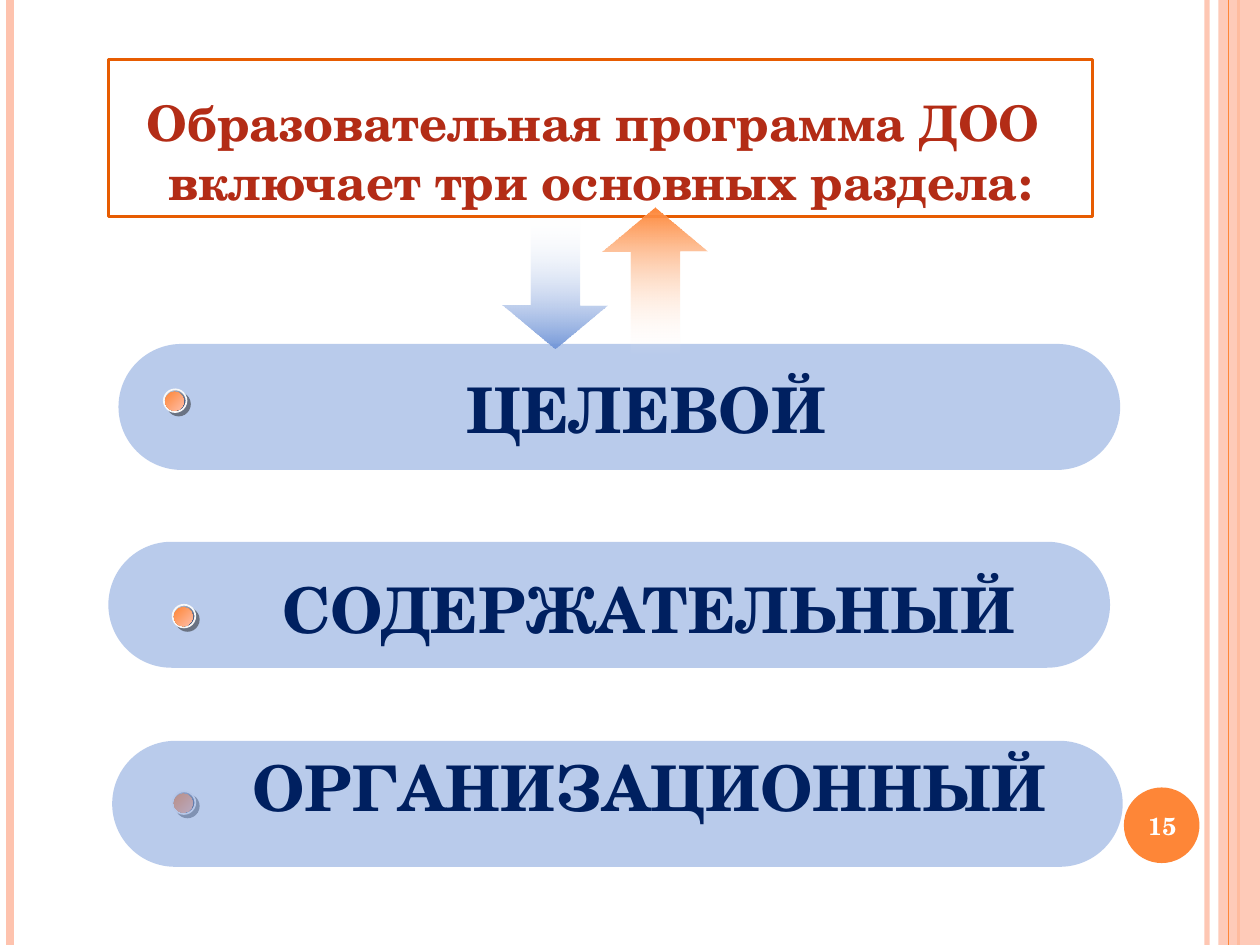
from lxml.etree import SubElement
from pptx import Presentation
from pptx.dml.color import RGBColor
from pptx.enum.shapes import MSO_CONNECTOR, MSO_SHAPE
from pptx.enum.text import MSO_ANCHOR, MSO_AUTO_SIZE, PP_ALIGN
from pptx.oxml.ns import qn
from pptx.util import Inches, Pt

FONT = "TeX Gyre Schola"
WHITE = RGBColor(0xFF, 0xFF, 0xFF)
PEACH = RGBColor(0xFE, 0xC3, 0xAE)
LIGHT_PEACH = RGBColor(0xFE, 0xBE, 0xA8)
ORANGE = RGBColor(0xFE, 0x86, 0x37)
DARK_ORANGE = RGBColor(0xE7, 0x5C, 0x01)
RED = RGBColor(0xB3, 0x2C, 0x16)
BLUE = RGBColor(0x75, 0x98, 0xD9)
NAVY = RGBColor(0x00, 0x20, 0x60)
DEEP_BLUE = RGBColor(0x22, 0x38, 0x64)
SILVER = RGBColor(0xDD, 0xDD, 0xE1)
OFF_WHITE = RGBColor(0xF8, 0xF8, 0xF8)


def set_alpha(element, percent):
    """Set the opacity of the first RGB colour inside an XML element."""
    color = next(element.iter(qn("a:srgbClr")))
    SubElement(color, qn("a:alpha"), val=str(percent * 1000))


class SlideBuilder:
    def __init__(self, slide):
        self.slide = slide

    def rule(self, x, color, width, alpha=100):
        """Draw a vertical line over the whole slide height."""
        line = self.slide.shapes.add_connector(
            MSO_CONNECTOR.STRAIGHT, Inches(x), 0, Inches(x), Inches(7.5))
        line.line.color.rgb = color
        line.line.width = Pt(width)
        sp_pr = line._element.spPr
        SubElement(sp_pr, qn("a:effectLst"))
        if alpha < 100:
            set_alpha(sp_pr, alpha)

    def shape(self, kind, box, color=None, alpha=100, parent=None):
        shapes = (parent or self.slide).shapes
        sp = shapes.add_shape(kind, *map(Inches, box))
        sp.shadow.inherit = False
        sp.line.fill.background()
        if color is not None:
            sp.fill.solid()
            sp.fill.fore_color.rgb = color
            if alpha < 100:
                set_alpha(sp._element.spPr, alpha)
        return sp

    def gradient(self, sp, start, end, angle):
        sp.fill.gradient()
        sp.fill.gradient_angle = angle
        for stop, color in zip(sp.fill.gradient_stops, (start, end)):
            stop.color.rgb = color

    def bar(self, left, top, width):
        bar = self.shape(MSO_SHAPE.ROUNDED_RECTANGLE, (left, top, width, 1), BLUE, 50)
        bar.adjustments[0] = 0.5

    def arrow(self, box, rotation, color):
        """Draw an arrow that fades in towards its head."""
        arrow = self.shape(MSO_SHAPE.RIGHT_ARROW, box)
        arrow.rotation = rotation
        arrow.adjustments[0] = 0.465
        arrow.adjustments[1] = 0.421
        self.gradient(arrow, WHITE, color, 0)
        set_alpha(arrow._element.spPr, 0)

    def bullet(self, left, top):
        group = self.slide.shapes.add_group_shape()
        rim = self.shape(MSO_SHAPE.OVAL, (left, top, 0.18, 0.18), parent=group)
        self.gradient(rim, SILVER, DEEP_BLUE, 315)
        rim.line.color.rgb = OFF_WHITE
        rim.line.width = Pt(1)
        shadow = SubElement(
            rim._element.spPr.find(qn("a:effectLst")), qn("a:outerShdw"),
            dist=str(Pt(2.8)), dir="2700000", algn="ctr", rotWithShape="0")
        SubElement(shadow, qn("a:srgbClr"), val="1C1C1C")
        set_alpha(shadow, 50)
        core = self.shape(
            MSO_SHAPE.OVAL, (left + 0.01, top + 0.02, 0.15, 0.15), parent=group)
        self.gradient(core, ORANGE, LIGHT_PEACH, 315)

    def set_text(self, tf, text, size, color, anchor, spacing=None):
        tf.text = text
        tf.word_wrap = True
        tf.auto_size = MSO_AUTO_SIZE.NONE
        tf.vertical_anchor = anchor
        p = tf.paragraphs[0]
        p.alignment = PP_ALIGN.CENTER
        p.line_spacing = spacing
        for r in p.runs:
            r.font.name = FONT
            r.font.size = Pt(size)
            r.font.bold = True
            r.font.color.rgb = color

    def title(self, text, box):
        title = self.slide.shapes.title
        title.left, title.top, title.width, title.height = map(Inches, box)
        title.line.color.rgb = DARK_ORANGE
        title.line.width = Pt(1.5)
        self.set_text(title.text_frame, text, 28, RED, MSO_ANCHOR.BOTTOM)

    def label(self, text, box, size=36, color=NAVY, anchor=MSO_ANCHOR.TOP, spacing=0.9):
        tb = self.slide.shapes.add_textbox(*map(Inches, box))
        self.set_text(tb.text_frame, text, size, color, anchor, spacing)


def main():
    prs = Presentation()
    prs.slide_width, prs.slide_height = Inches(10), Inches(7.5)
    s = SlideBuilder(prs.slides.add_slide(prs.slide_layouts[5]))

    s.rule(9.58, PEACH, 3, 93)
    s.rule(0.08, PEACH, 4.5)
    s.rule(9.83, ORANGE, 1.5)
    s.shape(MSO_SHAPE.RECTANGLE, (9.67, 0, 0.33, 7.5), PEACH, 87)
    s.rule(9.75, ORANGE, 0.75)
    s.shape(MSO_SHAPE.OVAL, (8.92, 6.25, 0.6, 0.6), ORANGE)

    s.title("Образовательная программа ДОО \vвключает три основных раздела:",
            (0.86, 0.47, 7.81, 1.25))

    s.arrow((3.87, 1.82, 1.07, 0.83), 90, BLUE)
    s.bullet(1.37, 6.28)  # lies under the translucent third bar
    s.bar(0.94, 2.73, 7.95)
    s.arrow((4.61, 1.82, 1.18, 0.83), 270, ORANGE)
    s.bar(0.86, 4.3, 7.95)
    s.bar(0.89, 5.88, 8.02)

    s.label("ЦЕЛЕВОЙ", (1.64, 2.96, 6.98, 0.65))
    s.label("СОДЕРЖАТЕЛЬНЫЙ", (1.72, 4.55, 6.86, 0.65))
    s.label("ОРГАНИЗАЦИОННЫЙ", (1.81, 5.96, 6.69, 0.65))
    s.bullet(1.37, 4.8)
    s.bullet(1.3, 3.09)
    s.label("15", (8.89, 6.27, 0.67, 0.57), 14, WHITE, MSO_ANCHOR.MIDDLE, None)

    prs.save("out.pptx")


if __name__ == "__main__":
    main()
